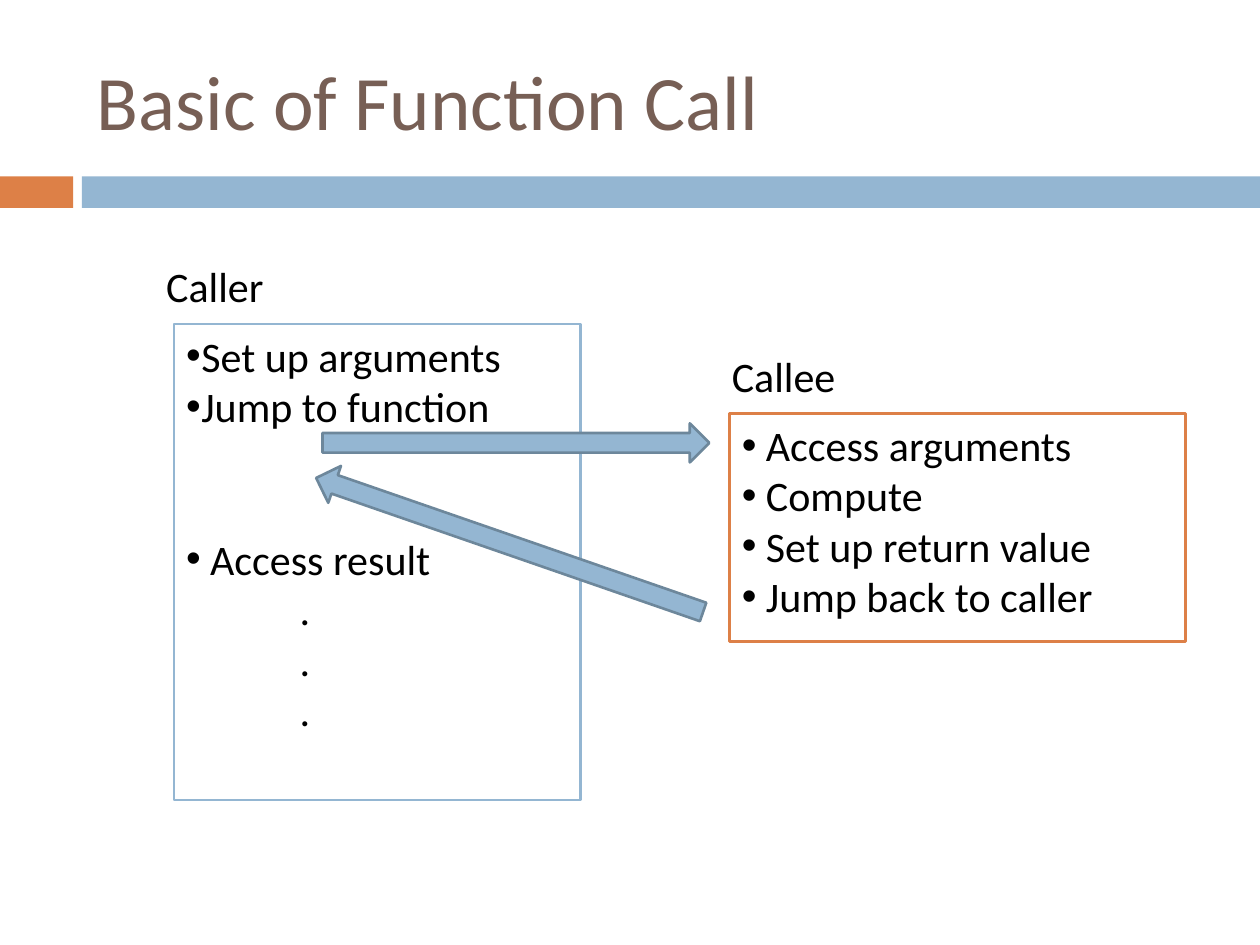
from dataclasses import dataclass

from lxml import etree
from pptx import Presentation
from pptx.dml.color import RGBColor
from pptx.enum.shapes import MSO_SHAPE
from pptx.enum.text import MSO_ANCHOR, PP_ALIGN
from pptx.oxml.ns import qn
from pptx.util import Inches, Pt

RECTANGLE = MSO_SHAPE.RECTANGLE
RIGHT_ARROW = MSO_SHAPE.RIGHT_ARROW
TOP, MIDDLE = MSO_ANCHOR.TOP, MSO_ANCHOR.MIDDLE
LEFT = PP_ALIGN.LEFT


@dataclass(frozen=True)
class Theme:
    font: str = "Calibri"
    title_size: int = 44
    body_size: int = 24
    line_width: float = 1.5
    title: str = "775F55"
    text: str = "000000"
    white: str = "FFFFFF"
    blue: str = "94B6D2"
    orange: str = "DD8047"
    arrow_line: str = "6D879B"


THEME = Theme()


@dataclass(frozen=True)
class Box:
    left: float
    top: float
    width: float
    height: float


@dataclass(frozen=True)
class Line:
    text: str
    indent: float = 0.19
    bullet: bool = True
    space_before: float = 0


@dataclass(frozen=True)
class Routine:
    name: str
    label: Box
    frame: Box
    color: str
    lines: tuple[Line, ...]


@dataclass(frozen=True)
class Arrow:
    box: Box
    rotation: float = 0


BANDS = (
    (Box(0, 1.4, 0.58, 0.25), THEME.orange),
    (Box(0.65, 1.4, 9.35, 0.25), THEME.blue),
)
TWO_LINES = 58.5  # points left open while the callee runs
CALLER = Routine(
    "Caller", Box(1.22, 2.02, 1.02, 0.5), Box(1.38, 2.57, 3.23, 3.78), THEME.blue,
    (
        Line("Set up arguments", indent=0.12),
        Line("Jump to function", indent=0.12),
        Line("Access result", space_before=TWO_LINES),
        *(Line(".", indent=0.9, bullet=False),) * 3,
    ),
)
CALLEE = Routine(
    "Callee", Box(5.71, 2.73, 1.07, 0.5), Box(5.79, 3.28, 3.62, 1.81), THEME.orange,
    tuple(Line(text) for text in (
        "Access arguments", "Compute", "Set up return value", "Jump back to caller",
    )),
)
CALL_ARROW = Arrow(Box(2.56, 3.36, 3.07, 0.31))
RETURN_ARROW = Arrow(Box(2.42, 4.17, 3.25, 0.31), rotation=199.1)


def place(box: Box) -> tuple:
    return tuple(Inches(n) for n in (box.left, box.top, box.width, box.height))


def add_block(slide, kind, box: Box, fill: str, line: str | None = None):
    shape = slide.shapes.add_shape(kind, *place(box))
    shape.shadow.inherit = False
    shape.fill.solid()
    shape.fill.fore_color.rgb = RGBColor.from_string(fill)
    if line:
        shape.line.color.rgb = RGBColor.from_string(line)
        shape.line.width = Pt(THEME.line_width)
    else:
        shape.line.fill.background()
    return shape


def format_text(paragraph, text: str, *, size: int = THEME.body_size,
                color: str = THEME.text) -> None:
    paragraph.alignment = LEFT
    run = paragraph.add_run()
    run.text = text
    run.font.name = THEME.font
    run.font.size = Pt(size)
    run.font.color.rgb = RGBColor.from_string(color)


def add_text(slide, box: Box, text: str, *, wrap: bool = False,
             anchor=TOP, **text_format) -> None:
    frame = slide.shapes.add_textbox(*place(box)).text_frame
    frame.word_wrap = wrap
    frame.vertical_anchor = anchor
    format_text(frame.paragraphs[0], text, **text_format)


def set_indent(paragraph, line: Line) -> None:
    properties = paragraph._p.get_or_add_pPr()
    properties.set("marL", str(Inches(line.indent)))
    if line.bullet:
        properties.set("indent", str(-Inches(line.indent)))
        etree.SubElement(properties, qn("a:buFont"), typeface="Arial")
        etree.SubElement(properties, qn("a:buChar"), char="•")


def add_routine(slide, routine: Routine) -> None:
    shape = add_block(slide, RECTANGLE, routine.frame, THEME.white, routine.color)
    frame = shape.text_frame
    frame.vertical_anchor = TOP
    for index, line in enumerate(routine.lines):
        paragraph = frame.add_paragraph() if index else frame.paragraphs[0]
        paragraph.space_before = Pt(line.space_before)
        set_indent(paragraph, line)
        format_text(paragraph, line.text)
    add_text(slide, routine.label, routine.name)


def add_arrow(slide, arrow: Arrow) -> None:
    shape = add_block(slide, RIGHT_ARROW, arrow.box, THEME.blue, THEME.arrow_line)
    shape.rotation = arrow.rotation


def main() -> None:
    presentation = Presentation()
    presentation.slide_width = Inches(10)
    presentation.slide_height = Inches(7.5)
    slide = presentation.slides.add_slide(presentation.slide_layouts[6])

    # Header
    for box, color in BANDS:
        add_block(slide, RECTANGLE, box, color)
    add_text(slide, Box(0.67, 0.25, 8.92, 1.08), "Basic of Function Call", wrap=True,
             anchor=MIDDLE, size=THEME.title_size, color=THEME.title)

    # Call and return between the two routines
    add_routine(slide, CALLER)
    add_arrow(slide, CALL_ARROW)
    add_routine(slide, CALLEE)
    add_arrow(slide, RETURN_ARROW)

    presentation.save("out.pptx")


if __name__ == "__main__":
    main()
